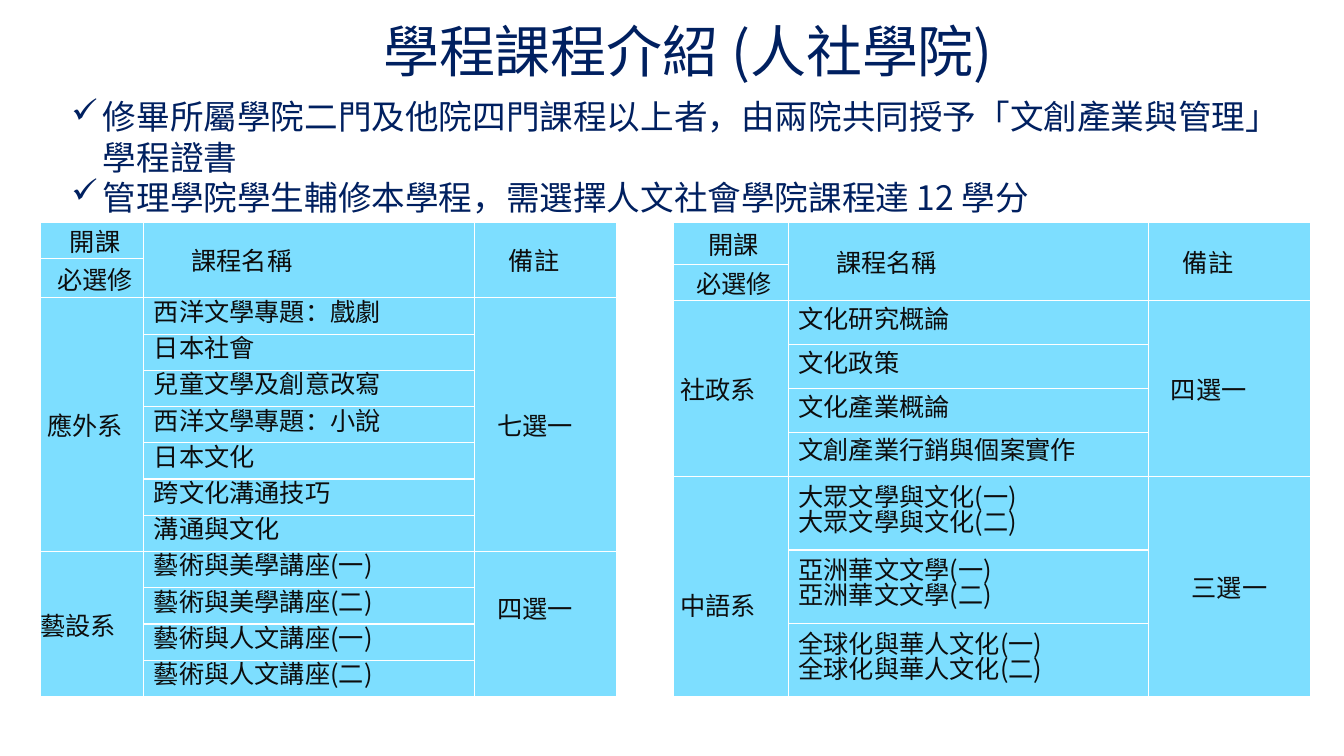
from dataclasses import dataclass

from lxml.etree import SubElement
from pptx import Presentation
from pptx.dml.color import RGBColor
from pptx.enum.text import MSO_ANCHOR, MSO_AUTO_SIZE, PP_ALIGN
from pptx.oxml.ns import qn
from pptx.util import Pt

FONT = "Noto Sans CJK SC"
NAVY = "002060"
INK = "0D0D0D"
SKY = "7DDEFF"
WHITE = "FFFFFF"

TITLE = "學程課程介紹 (人社學院)"
RULES = [
    "修畢所屬學院二門及他院四門課程以上者，由兩院共同授予「文創產業與管理」學程證書",
    "管理學院學生輔修本學程，需選擇人文社會學院課程達 12 學分",
]


@dataclass
class Department:
    name: str
    note: str
    courses: list
    name_left: float = 5
    name_top: float = 0
    note_bottom: float = 0
    note_centered: bool = False


FOREIGN_AND_ART = [
    Department("應外系", "七選一", [
        "西洋文學專題：戲劇", "日本社會", "兒童文學及創意改寫", "西洋文學專題：小說",
        "日本文化", "跨文化溝通技巧", "溝通與文化",
    ]),
    Department("藝設系", "四選一", [
        "藝術與美學講座(一)", "藝術與美學講座(二)",
        "藝術與人文講座(一)", "藝術與人文講座(二)",
    ], name_left=0, note_bottom=24),
]
SOCIAL_AND_CHINESE = [
    Department("社政系", "四選一", [
        "文化研究概論", "文化政策", "文化產業概論", "文創產業行銷與個案實作",
    ]),
    Department("中語系", "三選一", [
        "大眾文學與文化(一)\n大眾文學與文化(二)",
        "亞洲華文文學(一)\n亞洲華文文學(二)",
        "全球化與華人文化(一)\n全球化與華人文化(二)",
    ], name_top=25, note_centered=True),
]


def color(value):
    return RGBColor.from_string(value)


def add_run(paragraph, text, size, ink):
    run = paragraph.add_run()
    run.text = text
    run.font.size = Pt(size)
    run.font.name = FONT
    run.font.color.rgb = color(ink)
    SubElement(run.font._element, qn("a:ea"), typeface=FONT)


def set_title(slide):
    title = slide.shapes.title
    title.left, title.top, title.width, title.height = Pt(184.3), Pt(0), Pt(614.2), Pt(72)
    frame = title.text_frame
    frame.auto_size = MSO_AUTO_SIZE.NONE
    frame.vertical_anchor = MSO_ANCHOR.MIDDLE
    paragraph = frame.paragraphs[0]
    paragraph.alignment = PP_ALIGN.CENTER
    add_run(paragraph, TITLE, 40, NAVY)


def add_check_list(slide, items):
    box = slide.shapes.add_textbox(Pt(43.9), Pt(65.5), Pt(893.5), Pt(94))
    frame = box.text_frame
    frame.word_wrap = True
    for index, item in enumerate(items):
        paragraph = frame.add_paragraph() if index else frame.paragraphs[0]
        properties = paragraph._p.get_or_add_pPr()
        properties.set("marL", str(Pt(22.5)))
        properties.set("indent", str(-Pt(22.5)))
        SubElement(properties, qn("a:buChar"), char="✓")
        paragraph.line_spacing = Pt(28.6)
        add_run(paragraph, item, 24, NAVY)


def set_borders(cell):
    properties = cell._tc.get_or_add_tcPr()
    for position, side in enumerate(("lnL", "lnR", "lnT", "lnB")):
        line = properties.makeelement(qn(f"a:{side}"), {"w": str(Pt(1))})
        fill = SubElement(line, qn("a:solidFill"))
        SubElement(fill, qn("a:srgbClr"), val=WHITE)
        properties.insert(position, line)


def write_cell(cell, text, left=0, top=0, bottom=0, centered=False, spacing=None):
    cell.margin_left, cell.margin_right = Pt(left), Pt(0)
    cell.margin_top, cell.margin_bottom = Pt(top), Pt(bottom)
    cell.vertical_anchor = MSO_ANCHOR.MIDDLE
    frame = cell.text_frame
    for index, line in enumerate(text.split("\n")):
        paragraph = frame.add_paragraph() if index else frame.paragraphs[0]
        paragraph.alignment = PP_ALIGN.CENTER if centered else PP_ALIGN.LEFT
        if spacing:
            paragraph.line_spacing = Pt(spacing)
        add_run(paragraph, line, 18, INK)


def write_header(table):
    for column in (1, 2):
        table.cell(0, column).merge(table.cell(1, column))
    write_cell(table.cell(0, 0), "開課", left=4.3, centered=True)
    write_cell(table.cell(1, 0), "必選修", left=4.3, centered=True)
    write_cell(table.cell(0, 1), "課程名稱", left=34)
    write_cell(table.cell(0, 2), "備註", left=24.5)


def write_department(table, first, department):
    last = first + len(department.courses) - 1
    for column in (0, 2):
        table.cell(first, column).merge(table.cell(last, column))
    write_cell(table.cell(first, 0), department.name,
               left=department.name_left, top=department.name_top)
    write_cell(table.cell(first, 2), department.note,
               left=0 if department.note_centered else 16,
               bottom=department.note_bottom, centered=department.note_centered)
    for row, course in enumerate(department.courses, first):
        write_cell(table.cell(row, 1), course, left=7.2, spacing=18)
    return last + 1


def add_course_table(slide, left, widths, header_heights, course_heights, departments):
    heights = list(header_heights)
    for department, height in zip(departments, course_heights):
        heights += [height] * len(department.courses)
    frame = slide.shapes.add_table(len(heights), len(widths), Pt(left), Pt(158.5),
                                   Pt(sum(widths)), Pt(sum(heights)))
    table = frame.table
    table.first_row = False
    table.horz_banding = False
    for column, width in zip(table.columns, widths):
        column.width = Pt(width)
    for row, height in zip(table.rows, heights):
        row.height = Pt(height)
    for cell in table.iter_cells():
        cell.fill.solid()
        cell.fill.fore_color.rgb = color(SKY)
        set_borders(cell)
        cell.margin_top = cell.margin_bottom = Pt(0)
    write_header(table)
    first = len(header_heights)
    for department in departments:
        first = write_department(table, first, department)


def main():
    presentation = Presentation()
    presentation.slide_width, presentation.slide_height = Pt(960), Pt(540)
    slide = presentation.slides.add_slide(presentation.slide_layouts[5])
    set_title(slide)
    add_check_list(slide, RULES)
    add_course_table(slide, 28.8, (74, 236.3, 101.5), (26.1, 28.2), (25.9, 25.9),
                     FOREIGN_AND_ART)
    add_course_table(slide, 481, (82.2, 257.2, 115.6), (30.4, 26), (31.4, 52.5),
                     SOCIAL_AND_CHINESE)
    presentation.save("out.pptx")


if __name__ == "__main__":
    main()
